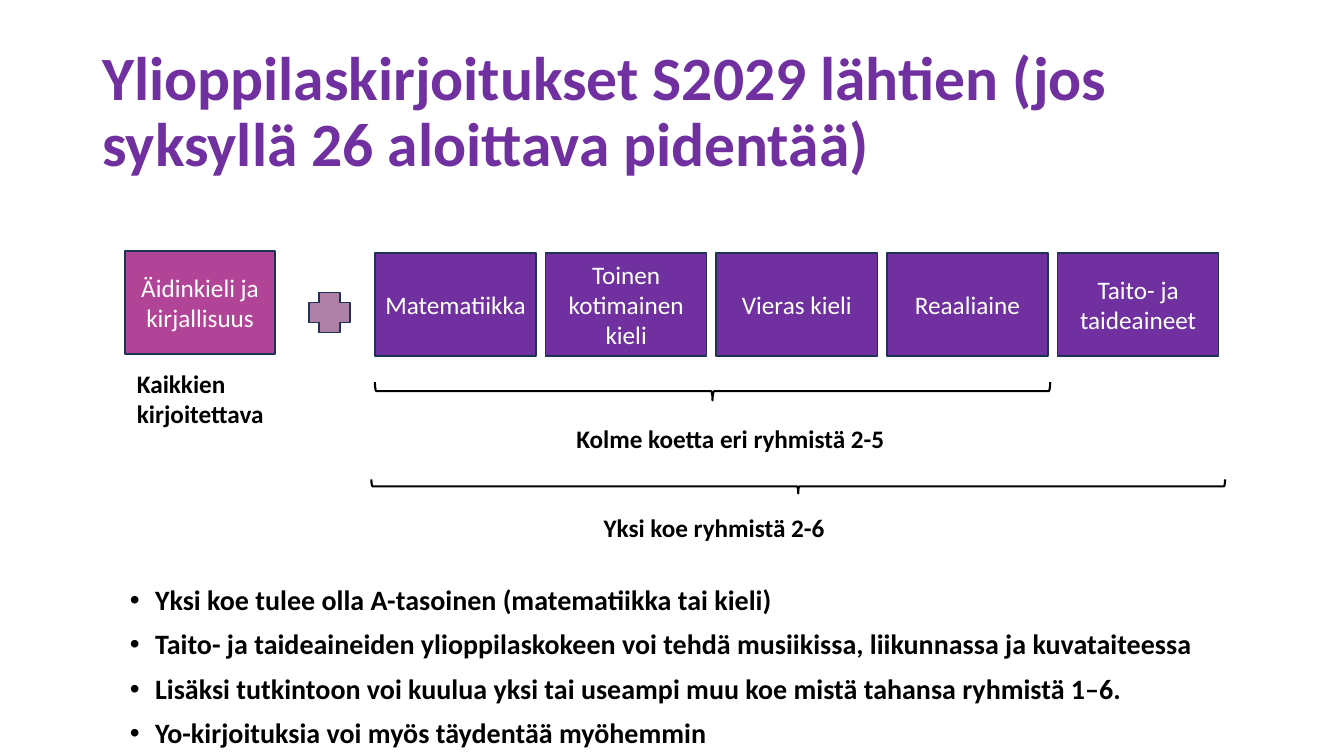
from lxml import etree
from pptx import Presentation
from pptx.dml.color import RGBColor
from pptx.enum.shapes import MSO_SHAPE
from pptx.enum.text import MSO_ANCHOR, PP_ALIGN
from pptx.oxml.ns import qn
from pptx.util import Pt

RECT, PLUS, LEFT_BRACE = MSO_SHAPE.RECTANGLE, MSO_SHAPE.CROSS, MSO_SHAPE.LEFT_BRACE
TOP, MIDDLE = MSO_ANCHOR.TOP, MSO_ANCHOR.MIDDLE
LEFT, CENTER = PP_ALIGN.LEFT, PP_ALIGN.CENTER

# Content
TITLE = "Ylioppilaskirjoitukset S2029 lähtien (jos syksyllä 26 aloittava pidentää)"
MANDATORY = "Äidinkieli ja kirjallisuus"
MANDATORY_NOTE = "Kaikkien kirjoitettava"
GROUPS = ["Matematiikka", "Toinen kotimainen kieli", "Vieras kieli",
          "Reaaliaine", "Taito- ja taideaineet"]
# Brace box (left, top, width, height), label, label position
REQUIREMENTS = [
    ((267.8, 272.9, 482.4, 13), "Kolme koetta eri ryhmistä 2-5", (404.6, 298.8)),
    ((265.3, 342.4, 609.8, 10), "Yksi koe ryhmistä 2-6", (424.1, 362.2)),
]
RULES = [
    "Yksi koe tulee olla A-tasoinen (matematiikka tai kieli)",
    "Taito- ja taideaineiden ylioppilaskokeen voi tehdä musiikissa, liikunnassa ja kuvataiteessa",
    "Lisäksi tutkintoon voi kuulua yksi tai useampi muu koe mistä tahansa ryhmistä 1–6.",
    "Yo-kirjoituksia voi myös täydentää myöhemmin",
]

THEME = {
    "font": "Calibri",
    "purple": RGBColor(0x70, 0x30, 0xA0),
    "pink": RGBColor(0xB2, 0x44, 0x98),
    "mauve": RGBColor(0xAE, 0x80, 0xA6),
    "outline": RGBColor(0x1E, 0x32, 0x56),
    "black": RGBColor(0, 0, 0),
    "white": RGBColor(255, 255, 255),
    "title": 44, "rule": 20, "label": 18,
}

# Layout
GROUP_LEFT, GROUP_TOP = 267.8, 180.7
GROUP_WIDTH, BOX_HEIGHT, GROUP_GAP = 115.2, 73.6, 6.7
BULLET_INDENT = 18

prs = Presentation()
prs.slide_width, prs.slide_height = Pt(960), Pt(540)
slide = prs.slides.add_slide(prs.slide_layouts[6])


def write(shape, lines, size, color, bold=False, align=LEFT, anchor=TOP):
    frame = shape.text_frame
    frame.word_wrap = True
    frame.vertical_anchor = anchor
    frame.text = "\n".join(lines)
    for paragraph in frame.paragraphs:
        paragraph.alignment = align
        font = paragraph.font
        font.name, font.size, font.bold = THEME["font"], Pt(THEME[size]), bold
        font.color.rgb = THEME[color]
    return frame.paragraphs


def add_text(box, lines, size, color="black", anchor=TOP):
    textbox = slide.shapes.add_textbox(*map(Pt, box))
    return write(textbox, lines, size, color, bold=True, anchor=anchor)


def add_figure(kind, box, fill=None, line="outline", weight=1):
    figure = slide.shapes.add_shape(kind, *map(Pt, box))
    figure.shadow.inherit = False
    if fill:
        figure.fill.solid()
        figure.fill.fore_color.rgb = THEME[fill]
    else:
        figure.fill.background()
    figure.line.color.rgb = THEME[line]
    figure.line.width = Pt(weight)
    return figure


def add_subject(box, name, fill):
    write(add_figure(RECT, box, fill), [name], "label", "white",
          align=CENTER, anchor=MIDDLE)


def add_brace(left, top, width, height):
    # The left brace is laid on its side, so its sides swap around the centre
    shift = (width - height) / 2
    brace = add_figure(LEFT_BRACE, (left + shift, top - shift, height, width),
                       line="black", weight=1.5)
    brace.rotation = 270


# Title
for heading in add_text((66, 28.8, 828, 104.4), [TITLE], "title", "purple", MIDDLE):
    heading.line_spacing = 0.9

# Mandatory exam and plus sign
add_subject((89.3, 179.3, 107.3, BOX_HEIGHT), MANDATORY, "pink")
add_text((90.7, 259.2, 133.9, 51), [MANDATORY_NOTE], "label")
add_figure(PLUS, (220.6, 208.8, 29.5, 28.8), "mauve")

# Exam groups
for index, group in enumerate(GROUPS):
    group_left = GROUP_LEFT + index * (GROUP_WIDTH + GROUP_GAP)
    add_subject((group_left, GROUP_TOP, GROUP_WIDTH, BOX_HEIGHT), group, "purple")

# Braces with their requirements
for brace_box, requirement, label_at in REQUIREMENTS:
    add_brace(*brace_box)
    add_text((*label_at, 331.2, 29), [requirement], "label")

# Bulleted rules
for rule in add_text((85.7, 415.4, 828, 124.6), RULES, "rule"):
    rule.line_spacing = 0.9
    rule.space_before = Pt(10)
    properties = rule._p.get_or_add_pPr()
    properties.set("marL", str(Pt(BULLET_INDENT)))
    properties.set("indent", str(-Pt(BULLET_INDENT)))
    bullet_font = etree.Element(qn("a:buFont"), typeface="Arial")
    bullet = etree.Element(qn("a:buChar"), char="•")
    run_defaults = properties.find(qn("a:defRPr"))
    run_defaults.addprevious(bullet_font)
    run_defaults.addprevious(bullet)

prs.save("out.pptx")
